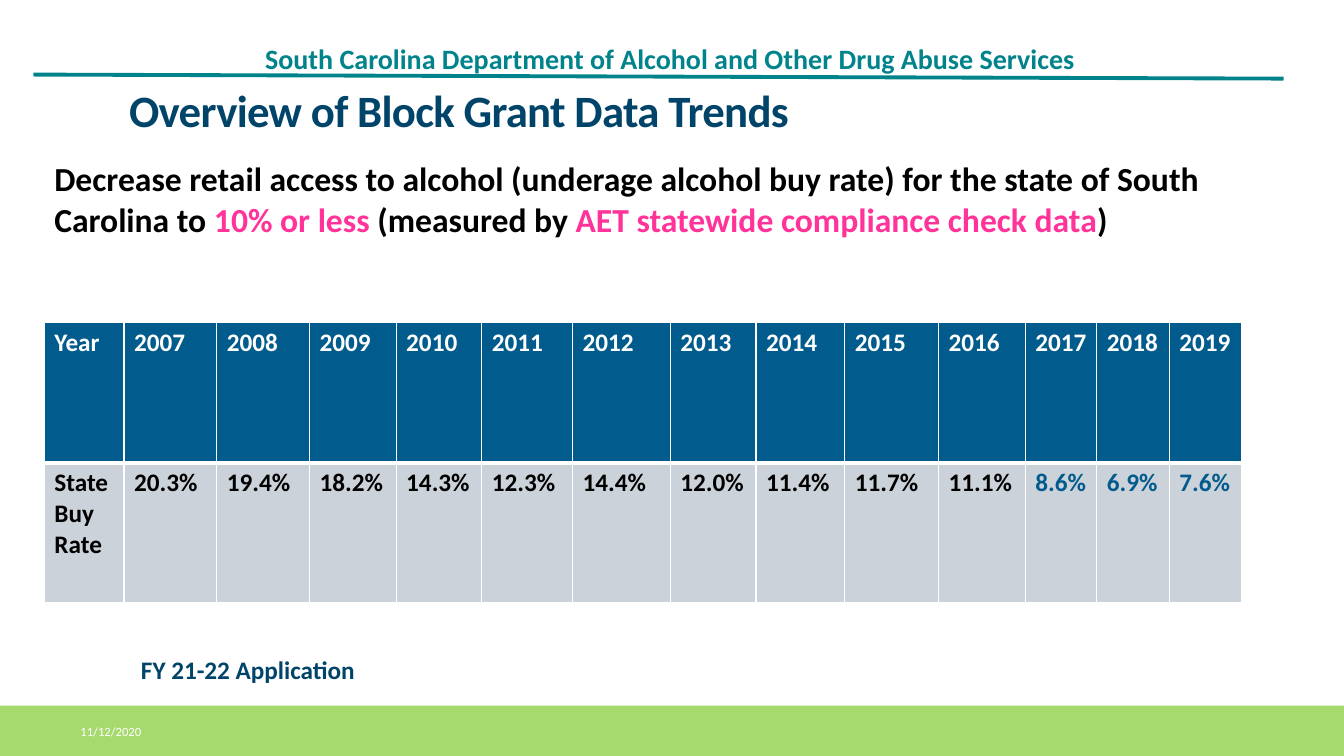
from lxml.etree import SubElement
from pptx import Presentation
from pptx.dml.color import RGBColor
from pptx.enum.shapes import MSO_CONNECTOR, MSO_SHAPE
from pptx.enum.text import MSO_ANCHOR, PP_ALIGN
from pptx.oxml.ns import qn
from pptx.util import Inches, Pt

TEAL, NAVY, BLUE, GREEN = "00838B", "014469", "015B8C", "A6D96E"
PINK, GRAY, BLACK, WHITE = "FF3399", "CCD2DA", "000000", "FFFFFF"

BUY_RATES = {
    "Year": "State Buy Rate",
    "2007": "20.3%", "2008": "19.4%", "2009": "18.2%", "2010": "14.3%",
    "2011": "12.3%", "2012": "14.4%", "2013": "12.0%", "2014": "11.4%",
    "2015": "11.7%", "2016": "11.1%", "2017": "8.6%", "2018": "6.9%",
    "2019": "7.6%",
}
GOAL_MET_YEARS = {"2017", "2018", "2019"}
COLUMN_WIDTHS = [0.79, 0.92, 0.92, 0.86, 0.85, 0.9, 0.97,
                 0.85, 0.88, 0.93, 0.86, 0.71, 0.72, 0.72]


def color(hex_text):
    return RGBColor.from_string(hex_text)


def lengths(*values):
    return [Inches(value) for value in values]


class SlideBuilder:
    font_name = "Calibri"

    def __init__(self, slide):
        self.slide = slide

    def style(self, paragraph, size, hex_text, bold=True):
        font = paragraph.font
        font.name, font.size, font.bold = self.font_name, Pt(size), bold
        font.color.rgb = color(hex_text)

    def title(self, text, box):
        shape = self.slide.shapes.title
        shape.left, shape.top, shape.width, shape.height = lengths(*box)
        frame = shape.text_frame
        frame.text = text
        frame.vertical_anchor = MSO_ANCHOR.TOP
        paragraph = frame.paragraphs[0]
        paragraph.alignment = PP_ALIGN.LEFT
        paragraph.line_spacing = 0.85
        self.style(paragraph, 32, NAVY)
        paragraph.runs[0].font._element.set("spc", "-50")

    def text(self, runs, box, size, hex_text, bold=True, wrap=True,
             anchor=MSO_ANCHOR.TOP):
        """Add a one-paragraph box; runs are (text, colour or None) pairs."""
        frame = self.slide.shapes.add_textbox(*lengths(*box)).text_frame
        frame.word_wrap = wrap
        frame.vertical_anchor = anchor
        paragraph = frame.paragraphs[0]
        self.style(paragraph, size, hex_text, bold)
        for run_text, run_color in runs:
            run = paragraph.add_run()
            run.text = run_text
            if run_color:
                run.font.color.rgb = color(run_color)
        return frame

    def band(self, box, hex_text):
        shape = self.slide.shapes.add_shape(MSO_SHAPE.RECTANGLE, *lengths(*box))
        shape.shadow.inherit = False
        shape.fill.solid()
        shape.fill.fore_color.rgb = color(hex_text)
        shape.line.fill.background()

    def rule(self, ends, hex_text, width):
        connector = self.slide.shapes.add_connector(
            MSO_CONNECTOR.STRAIGHT, *lengths(*ends))
        connector.line.color.rgb = color(hex_text)
        connector.line.width = Pt(width)
        SubElement(connector._element.spPr, qn("a:effectLst"))

    def cell(self, cell, text, fill, hex_text, bottom_width):
        cell.text = text
        self.style(cell.text_frame.paragraphs[0], 18, hex_text)
        properties = cell._tc.get_or_add_tcPr()
        for side in ("L", "R", "T", "B"):
            width = bottom_width if side == "B" else 1
            border = SubElement(properties, qn(f"a:ln{side}"), w=str(Pt(width)))
            border_fill = SubElement(border, qn("a:solidFill"))
            SubElement(border_fill, qn("a:srgbClr"), val=WHITE)
        cell.fill.solid()
        cell.fill.fore_color.rgb = color(fill)

    def rate_table(self, rates, widths, box):
        table = self.slide.shapes.add_table(
            2, len(rates), *lengths(*box)).table
        for column, width in zip(table.columns, widths):
            column.width = Inches(width)
        for index, (year, rate) in enumerate(rates.items()):
            rate_color = BLUE if year in GOAL_MET_YEARS else BLACK
            self.cell(table.cell(0, index), year, BLUE, WHITE, 3)
            self.cell(table.cell(1, index), rate, GRAY, rate_color, 1)


def main():
    presentation = Presentation()
    presentation.slide_width, presentation.slide_height = lengths(13.33, 7.5)
    title_only = presentation.slide_layouts[5]
    builder = SlideBuilder(presentation.slides.add_slide(title_only))

    agency = builder.text(
        [("South Carolina Department of Alcohol and Other Drug Abuse Services", None)],
        (2.56, 0.28, 10.21, 0.63), 20, TEAL, anchor=MSO_ANCHOR.MIDDLE)
    agency.margin_left = agency.margin_right = Inches(0.07)
    agency.margin_top = agency.margin_bottom = Inches(0.04)
    agency.paragraphs[0].line_spacing = 0.9
    builder.rule((0.33, 0.74, 12.73, 0.78), TEAL, 2.75)

    builder.band((0, 7, 13.33, 0.5), GREEN)
    builder.text([("11/12/2020", None)], (0.7, 7.06, 2.7, 0.4), 9, WHITE,
                 bold=False, anchor=MSO_ANCHOR.MIDDLE)

    builder.title("Overview of Block Grant Data Trends", (1.18, 0.85, 11, 0.67))
    builder.rate_table(BUY_RATES, COLUMN_WIDTHS, (0.44, 3.2, 11.88, 2.78))
    builder.text([
        ("Decrease retail access to alcohol (underage alcohol buy rate) "
         "for the state of South Carolina to ", None),
        ("10% or less ", PINK),
        ("(measured by ", None),
        ("AET statewide compliance check data", PINK),
        (")", None),
    ], (0.44, 1.52, 11.88, 1.48), 24, BLACK)
    builder.text([("FY 21-22 Application", None)], (1.3, 6.44, 2.34, 0.4),
                 18, NAVY, wrap=False)

    presentation.save("out.pptx")


if __name__ == "__main__":
    main()
